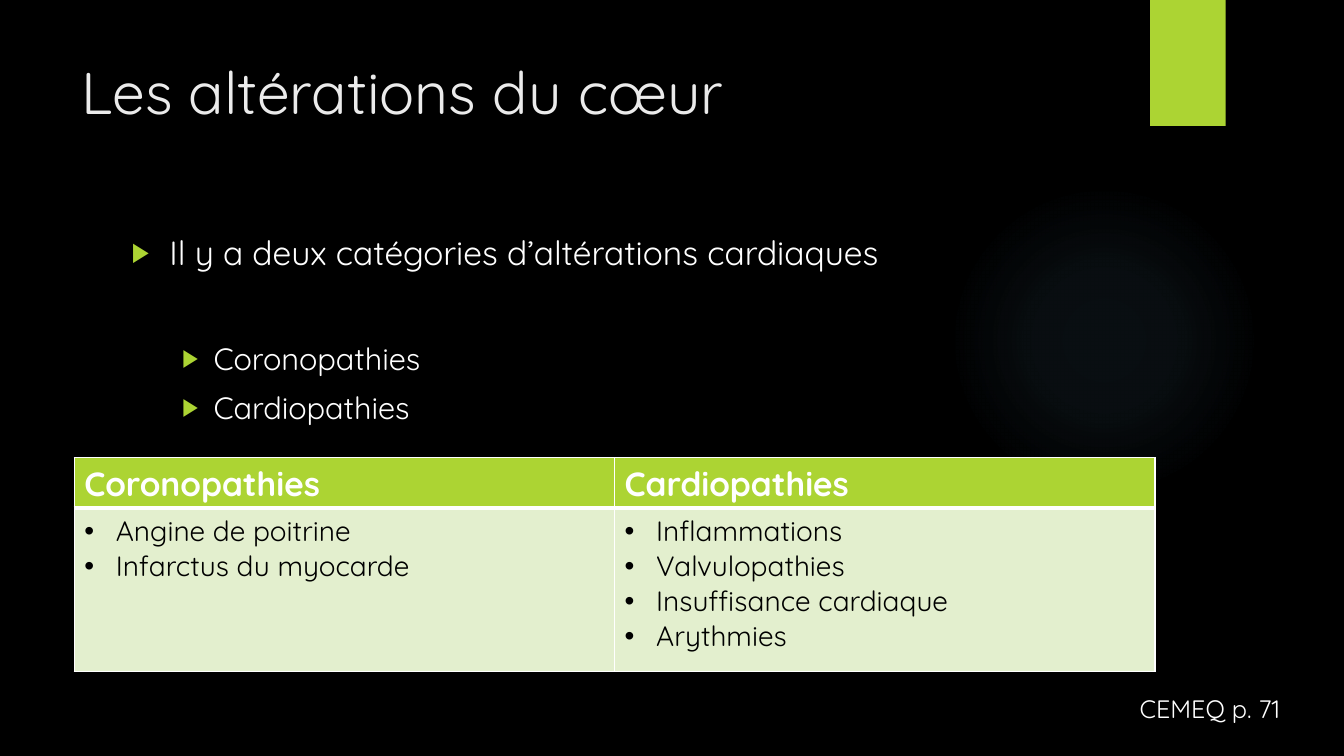
from lxml.etree import SubElement as Sub
from pptx import Presentation
from pptx.dml.color import RGBColor
from pptx.enum.shapes import MSO_SHAPE as Shape
from pptx.oxml import parse_xml
from pptx.oxml.ns import nsdecls, qn
from pptx.util import Pt

FONT = "Quicksand"
LIME, PALE, WHITE, BLACK = "ACD433", "E3EFCE", "FFFFFF", "000000"
HEADS = ["Coronopathies", "Cardiopathies"]
LISTS = [
    ["Angine de poitrine", "Infarctus du myocarde"],
    ["Inflammations", "Valvulopathies", "Insuffisance cardiaque", "Arythmies"],
]


def paint(fill, color):
    fill.solid()
    fill.fore_color.rgb = RGBColor.from_string(color)


def style(par, size, color, bold=False):
    for run in par.runs:
        font = run.font
        font.name, font.size, font.bold = FONT, Pt(size), bold
        paint(font.fill, color)


def bullet(par, char, left, hang, color=None, scale=100):
    props = par._p.get_or_add_pPr()
    props.set("marL", str(Pt(left)))
    props.set("indent", str(-Pt(hang)))
    if color:
        tint = Sub(props, qn("a:buClr"))
        Sub(tint, qn("a:srgbClr"), val=color)
    Sub(props, qn("a:buSzPct"), val=str(scale * 1000))
    Sub(props, qn("a:buFont"), typeface="Arial")
    Sub(props, qn("a:buChar"), char=char)


def add_text(slide, box, lines, size, color):
    frame = slide.shapes.add_textbox(*map(Pt, box)).text_frame
    frame.word_wrap = True
    frame.text = "\n".join(lines)
    for par in frame.paragraphs:
        style(par, size, color)
    return frame.paragraphs


def add_block(slide, kind, box):
    block = slide.shapes.add_shape(kind, *map(Pt, box))
    block.shadow.inherit = False
    block.line.fill.background()
    paint(block.fill, LIME)
    return block


def add_glow(slide, box, color, stops):
    glow = add_block(slide, Shape.OVAL, box)
    marks = "".join(
        f'<a:gs pos="{pos * 1000}"><a:srgbClr val="{color}">'
        f'<a:alpha val="{alpha * 1000}"/></a:srgbClr></a:gs>'
        for pos, alpha in stops)
    grad = parse_xml(
        f'<a:gradFill {nsdecls("a")} rotWithShape="1"><a:gsLst>{marks}</a:gsLst>'
        '<a:path path="circle"><a:fillToRect l="50000" t="50000" '
        'r="50000" b="50000"/></a:path></a:gradFill>')
    props = glow._element.spPr
    props.replace(props.find(qn("a:solidFill")), grad)


def edge(cell, top, base):
    # Borders come before the fill in the cell properties
    props = cell._tc.get_or_add_tcPr()
    for side, width in (("L", 1), ("R", 1), ("T", top), ("B", base)):
        line = Sub(props, qn(f"a:ln{side}"), w=str(Pt(width)))
        fill = Sub(line, qn("a:solidFill"))
        Sub(fill, qn("a:srgbClr"), val=WHITE)


def add_grid(slide, box, rows):
    table = slide.shapes.add_table(2, len(HEADS), *map(Pt, box)).table
    table.horz_banding = False
    for row, height in zip(table.rows, rows):
        row.height = Pt(height)
    for col, (head, items) in enumerate(zip(HEADS, LISTS)):
        top, body = table.cell(0, col), table.cell(1, col)
        edge(top, 1, 3)
        paint(top.fill, LIME)
        top.text_frame.text = head
        style(top.text_frame.paragraphs[0], 24, WHITE, True)
        edge(body, 3, 1)
        paint(body.fill, PALE)
        body.text_frame.text = "\n".join(items)
        for par in body.text_frame.paragraphs:
            bullet(par, "•", 22.5, 22.5)
            style(par, 20, BLACK)


def main():
    deck = Presentation()
    deck.slide_width, deck.slide_height = Pt(960), Pt(540)
    slide = deck.slides.add_slide(deck.slide_layouts[6])
    paint(slide.background.fill, BLACK)

    # Backdrop
    add_glow(slide, (677.5, 132, 222, 222), "7AC4F0", [(0, 7), (36, 6), (69, 0)])
    add_block(slide, Shape.RECTANGLE, (821.5, 0, 54, 90))

    # Title
    add_text(slide, (51, 36, 741, 110), ["Les altérations du cœur"], 42, "EBEBEB")

    # Outline
    lead, *subs = add_text(
        slide, (87, 162, 704, 160),
        ["Il y a deux catégories d’altérations cardiaques", *HEADS], 24, WHITE)
    bullet(lead, "▶", 27, 27, LIME, 80)
    for par, gap in zip(subs, (48, 9)):
        par.level = 1
        par.space_before = Pt(gap)
        bullet(par, "▶", 58.5, 22.5, LIME, 80)
        style(par, 22, WHITE)

    # Table and page reference
    add_grid(slide, (53, 327, 772, 152.5), (36, 116.5))
    add_text(slide, (807, 492, 133, 29), ["CEMEQ p. 71"], 18, WHITE)

    deck.save("out.pptx")


if __name__ == "__main__":
    main()
